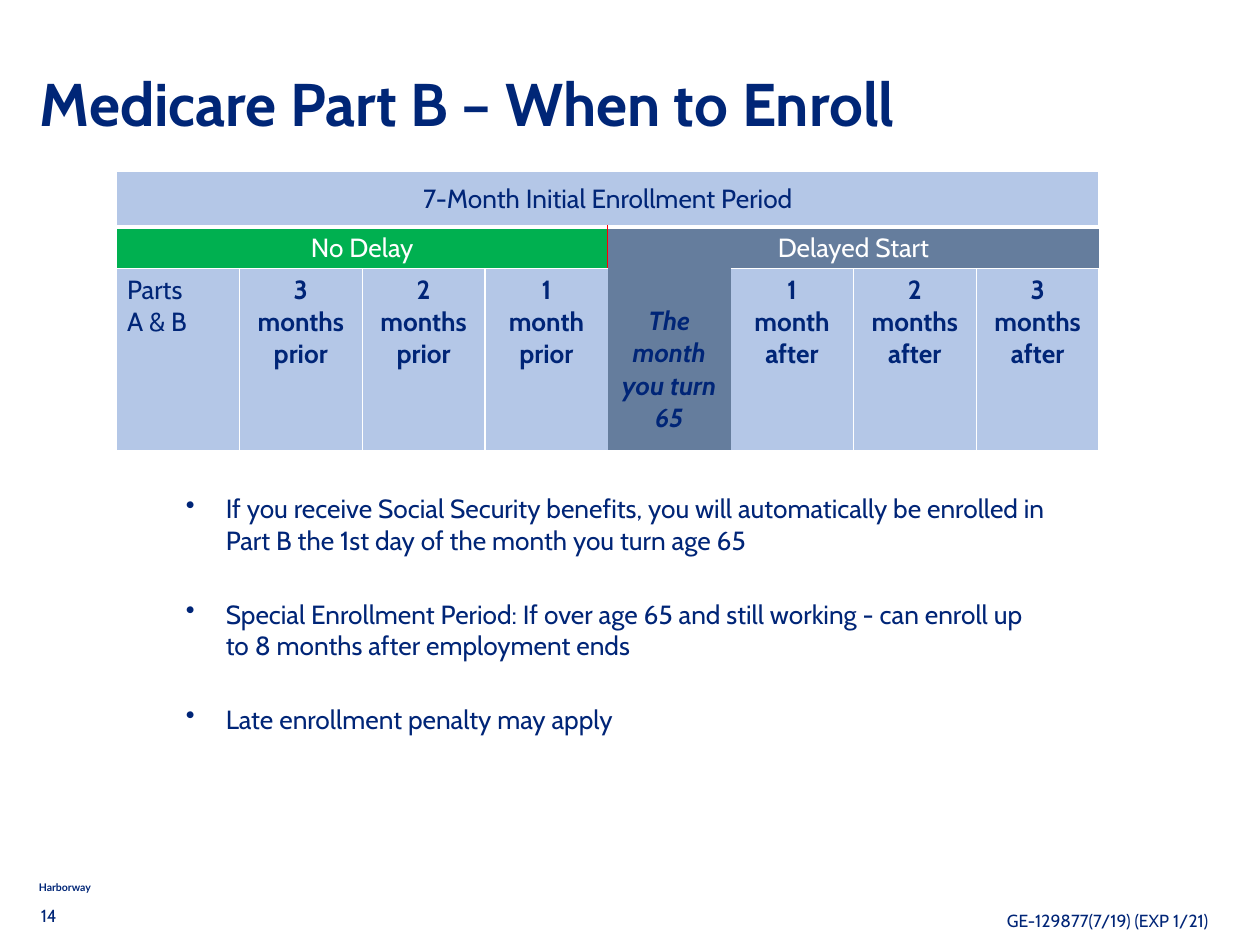
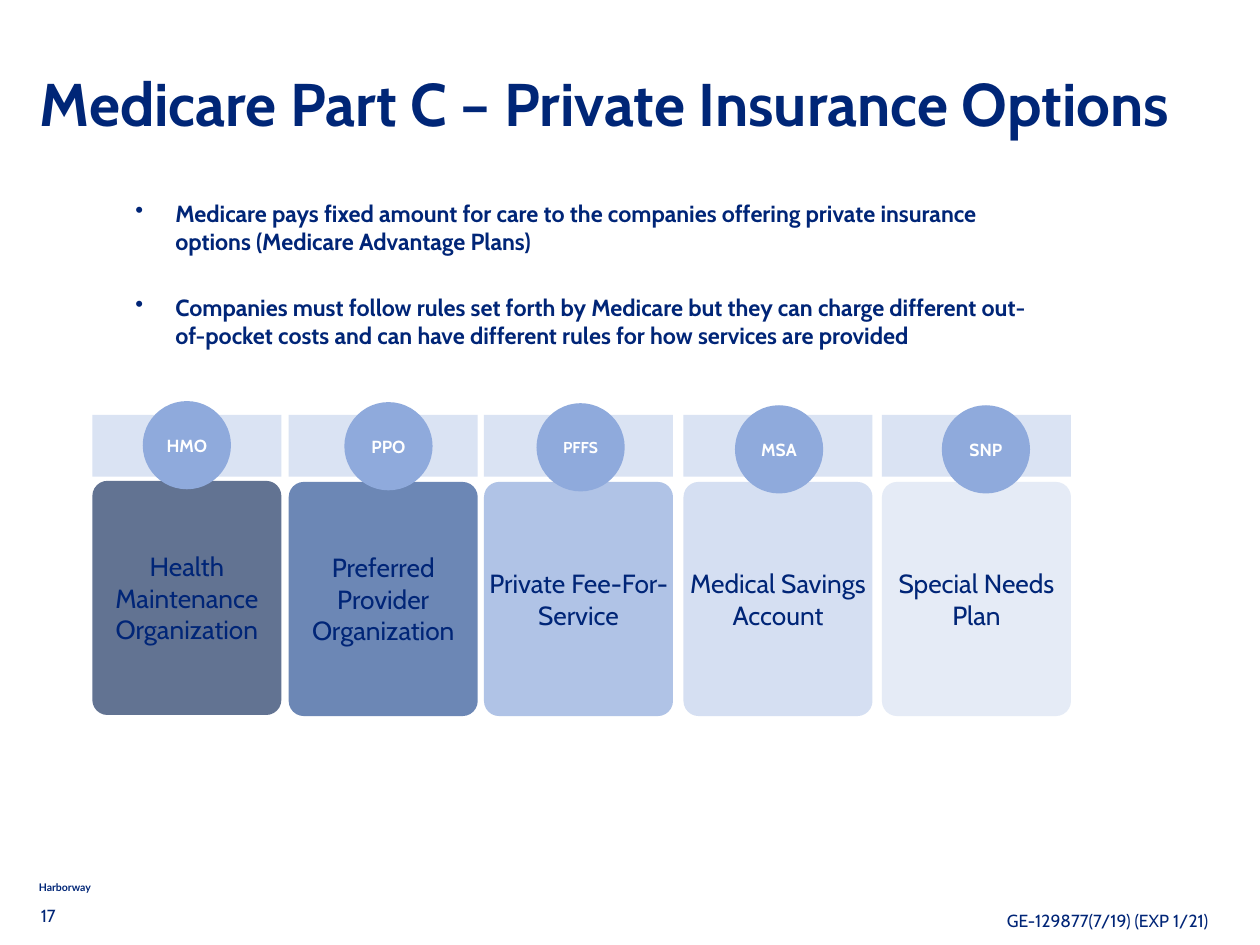
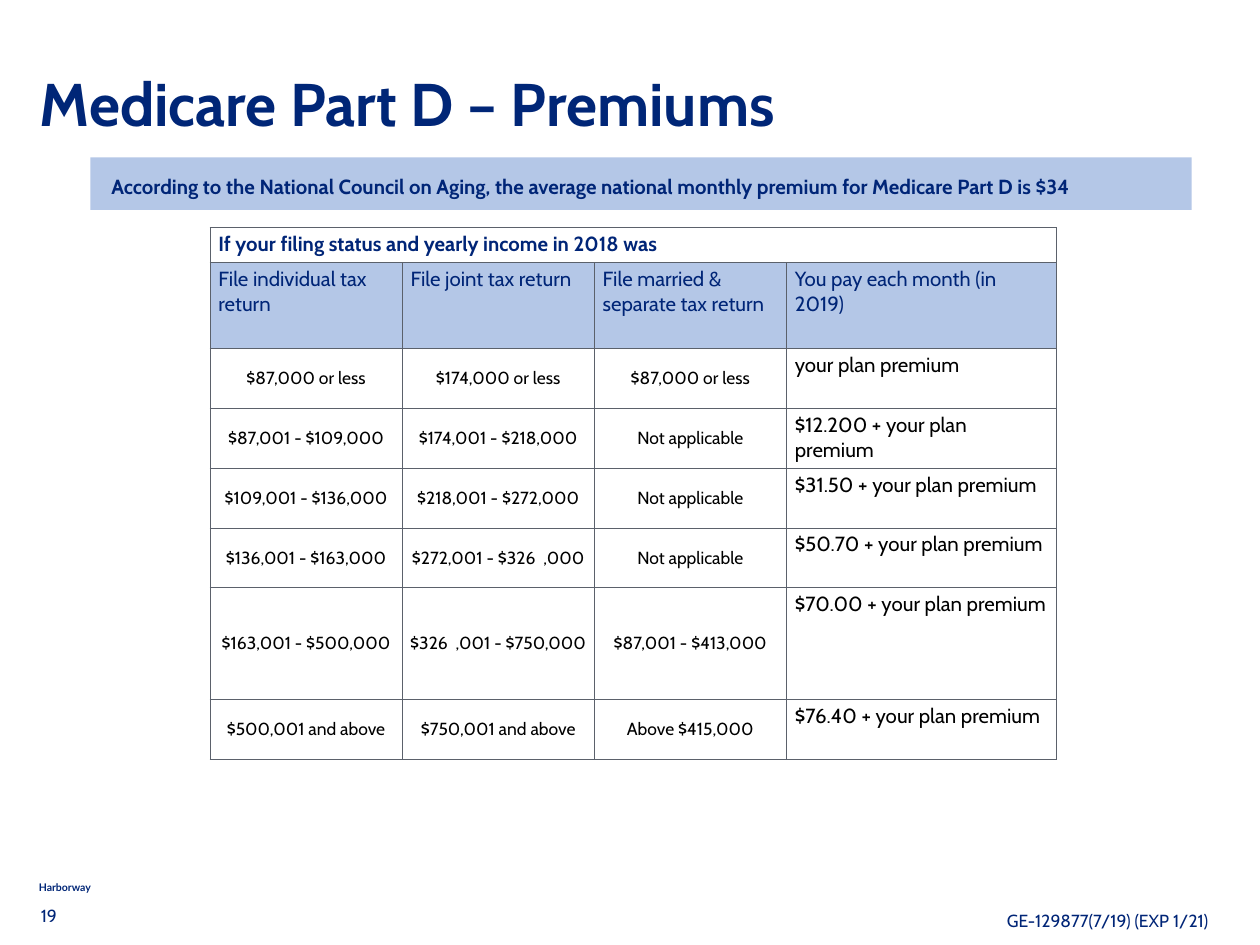
"""Build three slides on Medicare enrollment, plan options and premiums."""
from dataclasses import dataclass
from typing import NamedTuple

from lxml import etree
from pptx import Presentation
from pptx.dml.color import RGBColor
from pptx.enum.shapes import MSO_SHAPE
from pptx.enum.text import MSO_ANCHOR, PP_ALIGN
from pptx.oxml.ns import qn
from pptx.shapes.autoshape import Shape
from pptx.slide import Slide
from pptx.table import Table, _Cell
from pptx.util import Inches, Pt

LEFT, CENTER = PP_ALIGN.LEFT, PP_ALIGN.CENTER
TOP, MIDDLE = MSO_ANCHOR.TOP, MSO_ANCHOR.MIDDLE
RECT, ROUND, OVAL = MSO_SHAPE.RECTANGLE, MSO_SHAPE.ROUNDED_RECTANGLE, MSO_SHAPE.OVAL


@dataclass(frozen=True)
class Theme:
    font: str = "Cabin"
    mark: str = "Lato"
    head: str = "002677"
    ink: str = "002577"
    black: str = "000000"
    white: str = "FFFFFF"
    pale: str = "B4C7E7"
    green: str = "00B050"
    slate: str = "657D9D"
    red: str = "FF0000"
    rule: str = "5B616B"
    band: str = "DAE3F3"
    dot: str = "8FAADC"
    title: float = 41.3
    body: float = 18
    list: float = 16
    note: float = 14
    small: float = 12
    tight: float = 10.8
    tiny: float = 7.2


class Box(NamedTuple):
    x: float
    y: float
    w: float
    h: float


class Edge(NamedTuple):
    color: str
    width: float


class Plan(NamedTuple):
    code: str
    name: str
    x: float
    y: float
    dot: tuple[float, float]
    color: str
    alpha: int
    size: float


T = Theme()
BASE = (0.1, 0.05, 0.1, 0.05)
NONE = (0, 0, 0, 0)
THIN = Edge(T.white, 1)
THICK = Edge(T.white, 3)
RED = Edge(T.red, 1)
GRID = Edge(T.rule, 0.6)
PLANS = (
    Plan("HMO", "Health Maintenance Organization", 0.88, 4.58, (1.36, 3.82), "203864", 70, T.small),
    Plan("PPO", "Preferred Provider Organization", 2.75, 4.59, (3.28, 3.83), "2F5597", 70, T.small),
    Plan("PFFS", "Private Fee-For-Service", 4.61, 4.59, (5.11, 3.84), T.dot, 70, T.tight),
    Plan("MSA", "Medical Savings Account", 6.51, 4.59, (7, 3.86), T.dot, 37, T.small),
    Plan("SNP", "Special Needs Plan", 8.4, 4.59, (8.97, 3.86), T.band, 70, T.small),
)
HEADS = ("File individual tax return", "File joint tax return",
         "File married & separate tax return", "You pay each month (in 2019)")
RATES = (
    ("$87,000 or less", "$174,000 or less", "$87,000 or less", "your plan premium"),
    ("$87,001 - $109,000", "$174,001 - $218,000", "Not applicable", "$12.200 + your plan premium"),
    ("$109,001 - $136,000", "$218,001 - $272,000", "Not applicable", "$31.50 + your plan premium"),
    ("$136,001 - $163,000", "$272,001 - $326  ,000", "Not applicable", "$50.70 + your plan premium"),
    ("$163,001 - $500,000", "$326  ,001 - $750,000", "$87,001 - $413,000", "$70.00 + your plan premium"),
    ("$500,001 and above", "$750,001 and above", "Above $415,000", "$76.40 + your plan premium"),
)


def write(host: Shape | _Cell, text: str, *, size: float = T.body, color: str = T.ink,
          font: str = T.font, bold: bool = False, italic: bool = False,
          align: PP_ALIGN = LEFT, anchor: MSO_ANCHOR = TOP,
          pad: tuple[float, float, float, float] = BASE,
          line: float = 1, gap: float = 0, bullet: bool = False) -> None:
    """Set the text of a shape or cell, one paragraph a line."""
    frame = host.text_frame
    box = host if isinstance(host, _Cell) else frame
    if box is frame:
        frame.word_wrap = True
    box.margin_left, box.margin_top, box.margin_right, box.margin_bottom = map(Inches, pad)
    box.vertical_anchor = anchor
    for i, part in enumerate(text.split("\n")):
        para = frame.add_paragraph() if i else frame.paragraphs[0]
        para.alignment = align
        para.line_spacing = line
        if i:
            para.space_before = Pt(gap)
        if bullet:
            props = para._p.get_or_add_pPr()
            props.set("marL", str(Inches(0.38)))
            props.set("indent", str(-Inches(0.38)))
            etree.SubElement(props, qn("a:buChar"), char="•")
        run = para.add_run()
        run.text = part
        run.font.name, run.font.size = font, Pt(size)
        run.font.bold, run.font.italic = bold, italic
        run.font.color.rgb = RGBColor.from_string(color)


def place(box: Box) -> list[int]:
    """Turn a box into lengths."""
    return [Inches(n) for n in box]


def label(slide: Slide, box: Box) -> Shape:
    """Add an empty text box."""
    return slide.shapes.add_textbox(*place(box))


def block(slide: Slide, kind: MSO_SHAPE, box: Box, color: str, alpha: int = 100) -> Shape:
    """Add a flat filled shape."""
    shape = slide.shapes.add_shape(kind, *place(box))
    shape.shadow.inherit = False
    shape.line.fill.background()
    shape.fill.solid()
    shape.fill.fore_color.rgb = RGBColor.from_string(color)
    if alpha < 100:
        tint = next(shape._element.spPr.iter(qn("a:srgbClr")))
        etree.SubElement(tint, qn("a:alpha"), val=str(alpha * 1000))
    return shape


def grid(slide: Slide, box: Box, cols: list[float], rows: list[float]) -> Table:
    """Add a table with given column widths and row heights."""
    table = slide.shapes.add_table(len(rows), len(cols), *place(box)).table
    table.first_row = table.horz_banding = False
    for col, width in zip(table.columns, cols):
        col.width = Inches(width)
    for row, height in zip(table.rows, rows):
        row.height = Inches(height)
    return table


def paint(cell: _Cell, color: str, left: Edge | None = THIN, right: Edge | None = THIN,
          top: Edge | None = THIN, base: Edge | None = THIN) -> None:
    """Set the edges and fill of a cell."""
    props = cell._tc.get_or_add_tcPr()
    for side, edge in zip("LRTB", (left, right, top, base)):
        line = etree.SubElement(props, qn(f"a:ln{side}"))
        if edge:
            line.set("w", str(Pt(edge.width)))
            fill = etree.SubElement(line, qn("a:solidFill"))
            etree.SubElement(fill, qn("a:srgbClr"), val=edge.color)
        else:
            line.set("w", "0")
            etree.SubElement(line, qn("a:noFill"))
    cell.fill.solid()
    cell.fill.fore_color.rgb = RGBColor.from_string(color)


def span(table: Table, row: int, first: int, last: int, color: str, **edges: Edge | None) -> _Cell:
    """Merge part of a row and paint it."""
    cell = table.cell(row, first)
    cell.merge(table.cell(row, last))
    for col in range(first, last + 1):
        paint(table.cell(row, col), color, **edges)
    return cell


def start(deck: Presentation, title: str, page: int) -> Slide:
    """Add a slide with its title and footers."""
    slide = deck.slides.add_slide(deck.slide_layouts[6])
    write(label(slide, Box(0.3, 8.33, 1.86, 0.24)), "Harborway", size=T.tiny, font=T.mark,
          color=T.head, bold=True, anchor=MIDDLE, pad=(0.07, 0.04, 0.07, 0.04))
    write(label(slide, Box(0.28, 0.63, 11.24, 0.77)), title, size=T.title, color=T.head,
          bold=True, anchor=MIDDLE, line=0.9)
    for box, text in ((Box(0.29, 8.59, 2.38, 0.3), str(page)),
                      (Box(9.49, 8.64, 2.38, 0.3), "GE-129877(7/19) (EXP 1/21)")):
        write(label(slide, box), text, size=T.small, line=0.9)
    return slide


def enroll(deck: Presentation) -> None:
    """Draw the enrollment period slide."""
    slide = start(deck, "Medicare Part B – When to Enroll", 14)
    table = grid(slide, Box(1.11, 1.63, 9.36, 2.66), [1.17] * 8, [0.53, 0.4, 1.73])
    write(span(table, 0, 0, 7, T.pale, base=THICK), "7-Month Initial Enrollment Period",
          align=CENTER, anchor=MIDDLE)
    write(span(table, 1, 0, 3, T.green, right=RED, top=THICK), "No Delay",
          color=T.white, align=CENTER)
    write(span(table, 1, 4, 7, T.slate, left=RED, right=None, top=THICK, base=None),
          "Delayed Start", color=T.white, align=CENTER)
    months = ("Parts\nA & B", "3 months prior", "2 months prior", "1\nmonth prior",
              "The month you turn 65", "1\nmonth after", "2 months after", "3 months after")
    for i, text in enumerate(months):
        cell = table.cell(2, i)
        turn = i == 4
        if turn:
            paint(cell, T.slate, None, None, None, None)
        else:
            paint(cell, T.pale, left=None if i == 5 else THIN, right=None if i == 3 else THIN)
        write(cell, text, bold=i > 0, italic=turn, align=CENTER if i else LEFT,
              pad=(0.1, 0.35, 0.1, 0.05) if turn else BASE)
    write(label(slide, Box(1.77, 4.69, 8.22, 2.82)),
          "If you receive Social Security benefits, you will automatically be enrolled in "
          "Part B the 1st day of the month you turn age 65\n"
          "Special Enrollment Period: If over age 65 and still working - can enroll up "
          "to 8 months after employment ends\n"
          "Late enrollment penalty may apply", pad=NONE, gap=29, bullet=True)


def plans(deck: Presentation) -> None:
    """Draw the private insurance slide."""
    slide = start(deck, "Medicare Part C – Private Insurance Options", 17)
    write(label(slide, Box(1.29, 1.9, 8.59, 1.35)),
          "Medicare pays fixed amount for care to the companies offering private insurance "
          "options (Medicare Advantage Plans)\n"
          "Companies must follow rules set forth by Medicare but they can charge different "
          "out-of-pocket costs and can have different rules for how services are provided",
          size=T.list, bold=True, pad=NONE, gap=26, bullet=True)
    for plan in PLANS:
        block(slide, RECT, Box(plan.x, 3.95, 1.8, 0.59), T.band)
        card = block(slide, ROUND, Box(plan.x, plan.y, 1.8, 2.23), plan.color, plan.alpha)
        card.adjustments[0] = 0.08
        write(card, plan.name, align=CENTER, anchor=MIDDLE, pad=NONE)
        dot = block(slide, OVAL, Box(*plan.dot, 0.84, 0.84), T.dot)
        write(dot, plan.code, size=plan.size, color=T.white, bold=True,
              align=CENTER, anchor=MIDDLE)


def rates(deck: Presentation) -> None:
    """Draw the premium table slide."""
    slide = start(deck, "Medicare Part D – Premiums", 19)
    band = block(slide, RECT, Box(0.86, 1.5, 10.49, 0.5), T.pale)
    write(band, "According to the National Council on Aging, the average national monthly "
          "premium for Medicare Part D is $34", size=T.note, bold=True, anchor=MIDDLE,
          pad=(0.2, 0.04, 0, 0))
    table = grid(slide, Box(2, 2.17, 8.06, 5.06), [1.83] * 3 + [2.57],
                 [0.33, 0.82] + [0.57] * 4 + [1.06, 0.57])
    edges = dict.fromkeys(("left", "right", "top", "base"), GRID)
    pad = (0.08, 0.04, 0.08, 0.04)
    write(span(table, 0, 0, 3, T.white, **edges),
          "If your filing status and yearly income in 2018 was", size=T.note, bold=True, pad=pad)
    for r, row in enumerate((HEADS, *RATES), 1):
        for c, text in enumerate(row):
            cell = table.cell(r, c)
            paint(cell, T.pale if r == 1 else T.white, **edges)
            color = T.ink if r == 1 else T.black
            if r == 1 or c == 3:
                write(cell, text, size=T.note, color=color, pad=pad)
            else:
                write(cell, text, size=T.small, color=color, align=CENTER, anchor=MIDDLE,
                      pad=(0.07, 0, 0.07, 0))


def main() -> None:
    """Build and save the deck."""
    deck = Presentation()
    deck.slide_width, deck.slide_height = Inches(12), Inches(9)
    for draw in (enroll, plans, rates):
        draw(deck)
    deck.save("out.pptx")


if __name__ == "__main__":
    main()
